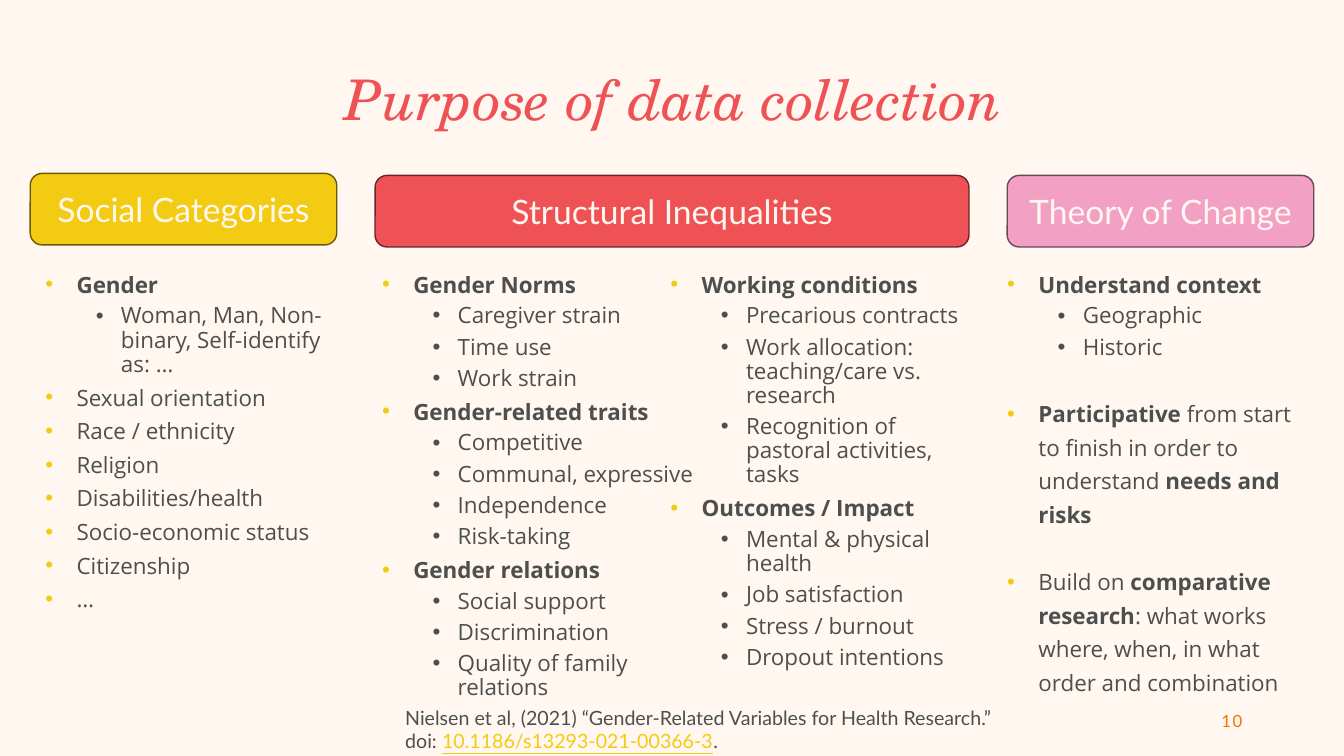
from dataclasses import dataclass

from lxml import etree
from pptx import Presentation
from pptx.dml.color import RGBColor
from pptx.enum import shapes, text
from pptx.oxml import ns
from pptx.util import Inches, Pt


@dataclass(frozen=True)
class Theme:
    background: str = "FFF7F0"
    ink: str = "4D4E4E"
    yellow: str = "F3CB13"
    red: str = "EF5255"
    pink: str = "F3A0C5"
    orange: str = "F87400"
    title_font: str = "TeX Gyre Schola"
    label_font: str = "Lato"
    body_font: str = "Open Sans"
    title_size: int = 40
    header_size: int = 24
    body_size: int = 16
    source_size: int = 14
    number_size: int = 12


THEME = Theme()
TITLE = dict(name=THEME.title_font, size=Pt(THEME.title_size), color=THEME.red,
             italic=True, bold=False)
HEADER = dict(name=THEME.label_font, size=Pt(THEME.header_size), color=THEME.background)
BODY = dict(name=THEME.body_font, size=Pt(THEME.body_size), color=THEME.ink)
SOURCE = dict(name=THEME.label_font, size=Pt(THEME.source_size), color=THEME.ink)
NUMBER = dict(name=THEME.label_font, size=Pt(THEME.number_size), color=THEME.orange)

# Left indent, hanging indent (inches), line spacing, space before (points), bullet colour
LEVELS = [(0.31, -0.31, 1.25, 0, THEME.yellow), (0.75, -0.25, 0.9, 5, THEME.ink)]
GROUP_GAP = 24

# Box, fill and outline of each heading
HEADERS = [
    ("Social Categories", (0.3, 1.72, 3.04, 0.71), THEME.yellow, "6B5908"),
    ("Structural Inequalities", (3.72, 1.74, 5.89, 0.71), THEME.red, "692425"),
    ("Theory of Change", (9.99, 1.74, 3.04, 0.71), THEME.pink, "6B4656"),
]

# "- " marks a second-level item, "+ " a gap above, ** switches bold
SOCIAL = ["**Gender**", "- Woman, Man, Non-binary, Self-identify as: …",
          "Sexual orientation", "Race / ethnicity", "Religion", "Disabilities/health",
          "Socio-economic status", "Citizenship", "…"]
GENDER = ["**Gender Norms**", "- Caregiver strain", "- Time use", "- Work strain",
          "**Gender-related traits**", "- Competitive", "- Communal, expressive",
          "- Independence", "- Risk-taking",
          "**Gender relations**", "- Social support", "- Discrimination",
          "- Quality of family relations"]
WORK = ["**Working conditions**", "- Precarious contracts",
        "- Work allocation: teaching/care vs. research",
        "- Recognition of pastoral activities, tasks",
        "**Outcomes / Impact**", "- Mental & physical health", "- Job satisfaction",
        "- Stress / burnout", "- Dropout intentions"]
CHANGE = ["**Understand context**", "- Geographic", "- Historic",
          "+ **Participative** from start to finish in order to understand **needs and risks**",
          "+ Build on **comparative research**: what works where, when, in what order"
          " and combination"]


def rgb(value):
    return RGBColor.from_string(value)


def add_run(paragraph, words, style, **changes):
    run = paragraph.add_run()
    run.text = words
    for key, value in {**style, **changes}.items():
        if key == "color":
            run.font.color.rgb = rgb(value)
        else:
            setattr(run.font, key, value)
    return run


def place(shape, box):
    for key, value in zip(("left", "top", "width", "height"), box):
        setattr(shape, key, Inches(value))


def set_frame(shape, anchor, margin=None):
    frame = shape.text_frame
    values = dict(word_wrap=True, auto_size=text.MSO_AUTO_SIZE.NONE, vertical_anchor=anchor)
    if margin is not None:
        sides = ("left", "top", "right", "bottom")
        values.update({f"margin_{side}": Inches(margin) for side in sides})
    for key, value in values.items():
        setattr(frame, key, value)
    return frame


def add_text_box(slide, box):
    return slide.shapes.add_textbox(*map(Inches, box))


def add_bullet(paragraph, left, hanging, color):
    properties = paragraph._p.get_or_add_pPr()
    properties.set("marL", str(Inches(left)))
    properties.set("indent", str(Inches(hanging)))
    bullet_color = etree.SubElement(properties, ns.qn("a:buClr"))
    etree.SubElement(bullet_color, ns.qn("a:srgbClr"), val=color)
    etree.SubElement(properties, ns.qn("a:buFont"), typeface="Arial")
    etree.SubElement(properties, ns.qn("a:buChar"), char="•")


def fill_title(shape, box):
    place(shape, box)
    frame = set_frame(shape, text.MSO_ANCHOR.MIDDLE, 0)
    paragraph = frame.paragraphs[0]
    paragraph.alignment = text.PP_ALIGN.CENTER
    paragraph.line_spacing = 0.9
    add_run(paragraph, "Purpose of data collection", TITLE)


def add_header(slide, label, box, fill, outline):
    header = slide.shapes.add_shape(shapes.MSO_SHAPE.ROUNDED_RECTANGLE, *map(Inches, box))
    header.shadow.inherit = False
    header.fill.solid()
    header.fill.fore_color.rgb = rgb(fill)
    header.line.color.rgb = rgb(outline)
    header.line.width = Pt(1)
    paragraph = set_frame(header, text.MSO_ANCHOR.MIDDLE).paragraphs[0]
    paragraph.alignment = text.PP_ALIGN.CENTER
    add_run(paragraph, label, HEADER)


def fill_list(shape, box, items):
    place(shape, box)
    frame = set_frame(shape, text.MSO_ANCHOR.TOP, 0)
    for index, item in enumerate(items):
        paragraph = frame.add_paragraph() if index else frame.paragraphs[0]
        level = int(item.startswith("- "))
        left, hanging, spacing, before, color = LEVELS[level]
        add_bullet(paragraph, left, hanging, color)
        gap = GROUP_GAP if item.startswith("+ ") else before
        values = dict(level=level, line_spacing=spacing, space_before=Pt(gap),
                      space_after=Pt(0))
        for key, value in values.items():
            setattr(paragraph, key, value)
        words = item[2:] if item[:2] in ("- ", "+ ") else item
        for part, piece in enumerate(words.split("**")):
            if piece:
                add_run(paragraph, piece, BODY, bold=part % 2 == 1)


def add_source(slide, box):
    frame = set_frame(add_text_box(slide, box), text.MSO_ANCHOR.TOP)
    paragraph = frame.paragraphs[0]
    add_run(paragraph, "Nielsen et al, (2021) “Gender-Related Variables for Health Research.”",
            SOURCE)
    paragraph.add_line_break()
    add_run(paragraph, "doi: ", SOURCE)
    add_run(paragraph, "10.1186/s13293-021-00366-3", SOURCE, color=THEME.yellow, underline=True)
    add_run(paragraph, ".", SOURCE)


def add_slide_number(slide, box):
    frame = set_frame(add_text_box(slide, box), text.MSO_ANCHOR.MIDDLE)
    paragraph = frame.paragraphs[0]
    paragraph.alignment = text.PP_ALIGN.RIGHT
    run = add_run(paragraph, "10", NUMBER)
    run._r.get_or_add_rPr().set("spc", "100")


def main():
    presentation = Presentation()
    presentation.slide_width = Inches(13.33)
    presentation.slide_height = Inches(7.5)
    slide = presentation.slides.add_slide(presentation.slide_layouts[1])
    slide.background.fill.solid()
    slide.background.fill.fore_color.rgb = rgb(THEME.background)

    # Title and headings
    fill_title(slide.shapes.title, (1.22, 0.66, 10.92, 0.71))
    for header in HEADERS:
        add_header(slide, *header)

    # Lists: the first fills the body placeholder
    fill_list(slide.placeholders[1], (0.45, 2.62, 3.04, 4.33), SOCIAL)
    for box, items in [((3.79, 2.62, 3.2, 4.53), GENDER),
                       ((6.65, 2.62, 3, 4.53), WORK),
                       ((9.99, 2.62, 3.04, 4.22), CHANGE)]:
        fill_list(add_text_box(slide, box), box, items)

    # Footer
    add_source(slide, (3.92, 6.95, 6.35, 0.55))
    add_slide_number(slide, (9.42, 6.95, 3, 0.4))
    presentation.save("out.pptx")


if __name__ == "__main__":
    main()
